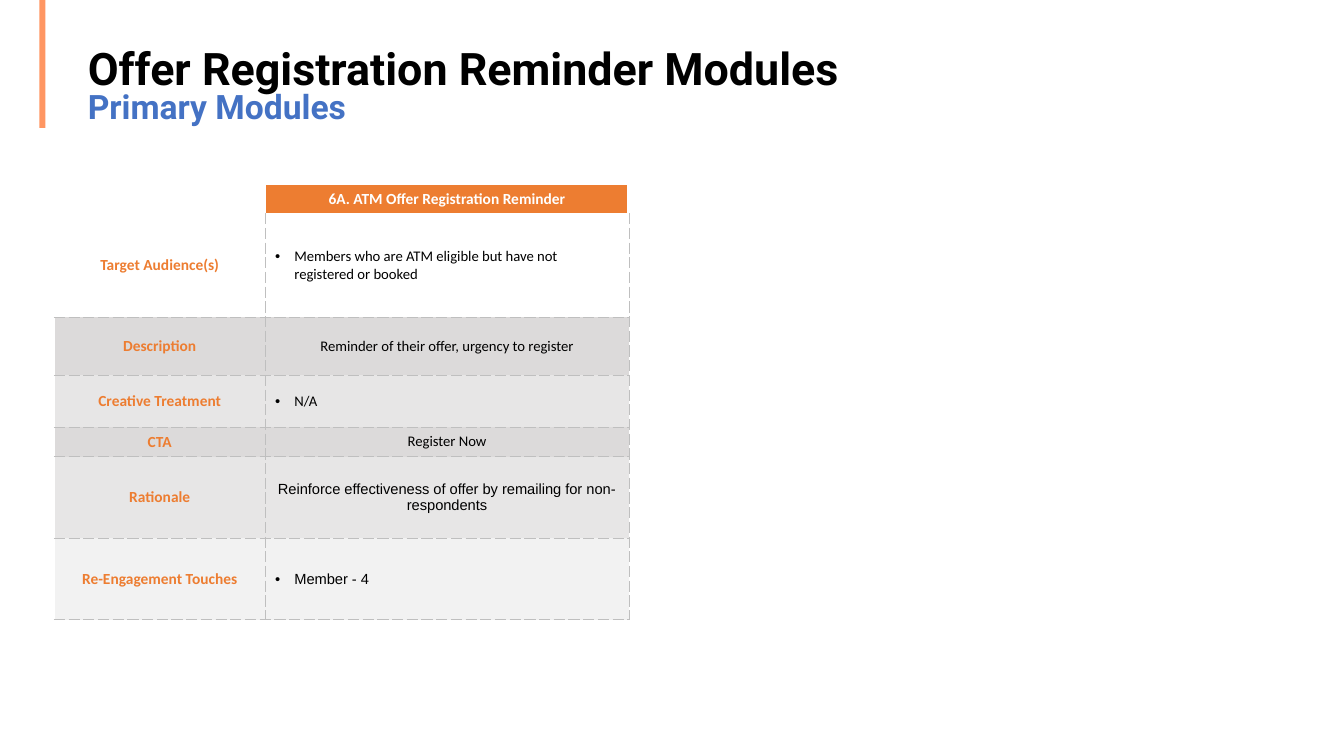
from dataclasses import dataclass

import lxml.etree
import pptx
import pptx.dml.color
import pptx.enum.shapes
import pptx.enum.text
import pptx.oxml.ns
import pptx.util

WIDTH, HEIGHT = pptx.util.Inches(13.33), pptx.util.Inches(7.5)
ORANGE, BLACK, WHITE, GREY = "ED7D31", "000000", "FFFFFF", "BFBFBF"
LIGHT, MID, DARK = "F2F2F2", "E7E6E6", "DCDADA"
DASHED, PLAIN = (GREY, 0.5, "sysDash"), (WHITE, 1, "solid")
HEADER_RIGHT = (WHITE, 3, "solid")
COLUMNS = (15.68, 27.08)


@dataclass
class ModuleRow:
    label: str
    text: str
    share: float
    fill: str
    bulleted: bool = False
    face: str = "Calibri"


ROWS = [
    ModuleRow("", "6A. ATM Offer Registration Reminder", 3.87, WHITE),
    ModuleRow("Target Audience(s)",
              "Members who are ATM eligible but have not registered or booked",
              13.73, WHITE, True),
    ModuleRow("Description", "Reminder of their offer, urgency to register", 7.6, DARK),
    ModuleRow("Creative Treatment", "N/A", 6.93, MID, True),
    ModuleRow("CTA", "Register Now", 3.87, DARK),
    ModuleRow("Rationale",
              "Reinforce effectiveness of offer by remailing for non-respondents",
              10.8, MID, face="Arial"),
    ModuleRow("Re-Engagement Touches", "Member - 4", 10.8, LIGHT, True, "Arial"),
]


def across(share: float) -> int:
    """Return a percentage of the slide width."""
    return round(WIDTH * share / 100)


def down(share: float) -> int:
    """Return a percentage of the slide height."""
    return round(HEIGHT * share / 100)


def rgb(value: str) -> pptx.dml.color.RGBColor:
    """Turn a hex string into a colour."""
    return pptx.dml.color.RGBColor.from_string(value)


def child(parent, tag: str, **attrs: str):
    """Append a drawing element to its parent."""
    return lxml.etree.SubElement(parent, pptx.oxml.ns.qn(tag), **attrs)


def style(font, face: str, size: float, color: str, bold: bool) -> None:
    """Set the face, size, colour and weight of a font."""
    font.name, font.size, font.bold = face, pptx.util.Pt(size), bold
    font.color.rgb = rgb(color)


def set_borders(cell, left, right, top, bottom) -> None:
    """Draw the four edges of a table cell."""
    tc_pr = cell._tc.get_or_add_tcPr()
    edges = zip(("a:lnL", "a:lnR", "a:lnT", "a:lnB"), (left, right, top, bottom))
    for i, (tag, (color, width, dash)) in enumerate(edges):
        ln = child(tc_pr, tag, w=str(pptx.util.Pt(width)))
        child(child(ln, "a:solidFill"), "a:srgbClr", val=color)
        child(ln, "a:prstDash", val=dash)
        tc_pr.insert(i, ln)


def fill_cell(cell, text: str, fill: str, face: str, size: float,
              color: str, bold: bool, bulleted: bool = False) -> None:
    """Write one table cell with its fill, bullet and font."""
    cell.fill.solid()
    cell.fill.fore_color.rgb = rgb(fill)
    cell.vertical_anchor = pptx.enum.text.MSO_ANCHOR.MIDDLE
    p = cell.text_frame.paragraphs[0]
    if not text:
        child(p._p, "a:endParaRPr", sz=str(round(size * 100)))
        return
    p.text = text
    if bulleted:
        p_pr = p._p.get_or_add_pPr()
        indent = pptx.util.Inches(0.19)
        p_pr.set("marL", str(indent))
        p_pr.set("indent", str(-indent))
        child(p_pr, "a:buFont", typeface="Arial")
        child(p_pr, "a:buChar", char="•")
    else:
        p.alignment = pptx.enum.text.PP_ALIGN.CENTER
    style(p.font, face, size, color, bold)


def add_accent(s) -> None:
    """Draw the bar at the top left."""
    sp = s.shapes.add_shape(pptx.enum.shapes.MSO_SHAPE.RECTANGLE,
                            across(2.93), 0, across(0.45), down(16.93))
    sp.shadow.inherit = False
    sp.fill.solid()
    sp.fill.fore_color.rgb = rgb("FF9662")
    sp.line.fill.background()


def add_title(s) -> None:
    """Fill the title placeholder with its two lines."""
    sp = s.shapes.title
    sp.left, sp.top = across(5.78), down(8.13)
    sp.width, sp.height = across(88.97), down(9.2)
    tf = sp.text_frame
    tf.auto_size = pptx.enum.text.MSO_AUTO_SIZE.NONE
    tf.vertical_anchor = pptx.enum.text.MSO_ANCHOR.BOTTOM
    p = tf.paragraphs[0]
    p.alignment, p.line_spacing = pptx.enum.text.PP_ALIGN.LEFT, 0.8
    r = p.add_run()
    r.text = "Offer Registration Reminder Modules"
    style(r.font, "Roboto", 32, BLACK, True)
    p.add_line_break()
    child(p._p[-1], "a:rPr", sz="3200")
    r = p.add_run()
    r.text = "Primary Modules"
    style(r.font, "Roboto", 24, "4472C4", True)


def add_module_table(s) -> None:
    """Build the table of module details."""
    table = s.shapes.add_table(len(ROWS), len(COLUMNS), across(4.05), down(24.4),
                               across(sum(COLUMNS)),
                               down(sum(row.share for row in ROWS))).table
    table.first_row = table.horz_banding = False
    for column, share in zip(table.columns, COLUMNS):
        column.width = across(share)
    for i, row in enumerate(ROWS):
        table.rows[i].height = down(row.share)
        label, detail = table.cell(i, 0), table.cell(i, 1)
        fill_cell(label, row.label, row.fill, "Calibri", 11, ORANGE, True)
        if i == 0:
            fill_cell(detail, row.text, ORANGE, row.face, 11, WHITE, True)
            set_borders(label, PLAIN, PLAIN, PLAIN, PLAIN)
            set_borders(detail, PLAIN, HEADER_RIGHT, PLAIN, PLAIN)
        else:
            fill_cell(detail, row.text, row.fill, row.face, 10.5, BLACK, False,
                      row.bulleted)
            top = PLAIN if i == 1 else DASHED
            set_borders(label, PLAIN, DASHED, top, DASHED)
            set_borders(detail, DASHED, DASHED, top, DASHED)


def main() -> None:
    """Build and save the slide."""
    prs = pptx.Presentation()
    prs.slide_width, prs.slide_height = WIDTH, HEIGHT
    s = prs.slides.add_slide(prs.slide_layouts[5])
    add_accent(s)
    add_title(s)
    add_module_table(s)
    prs.save("out.pptx")


if __name__ == "__main__":
    main()
